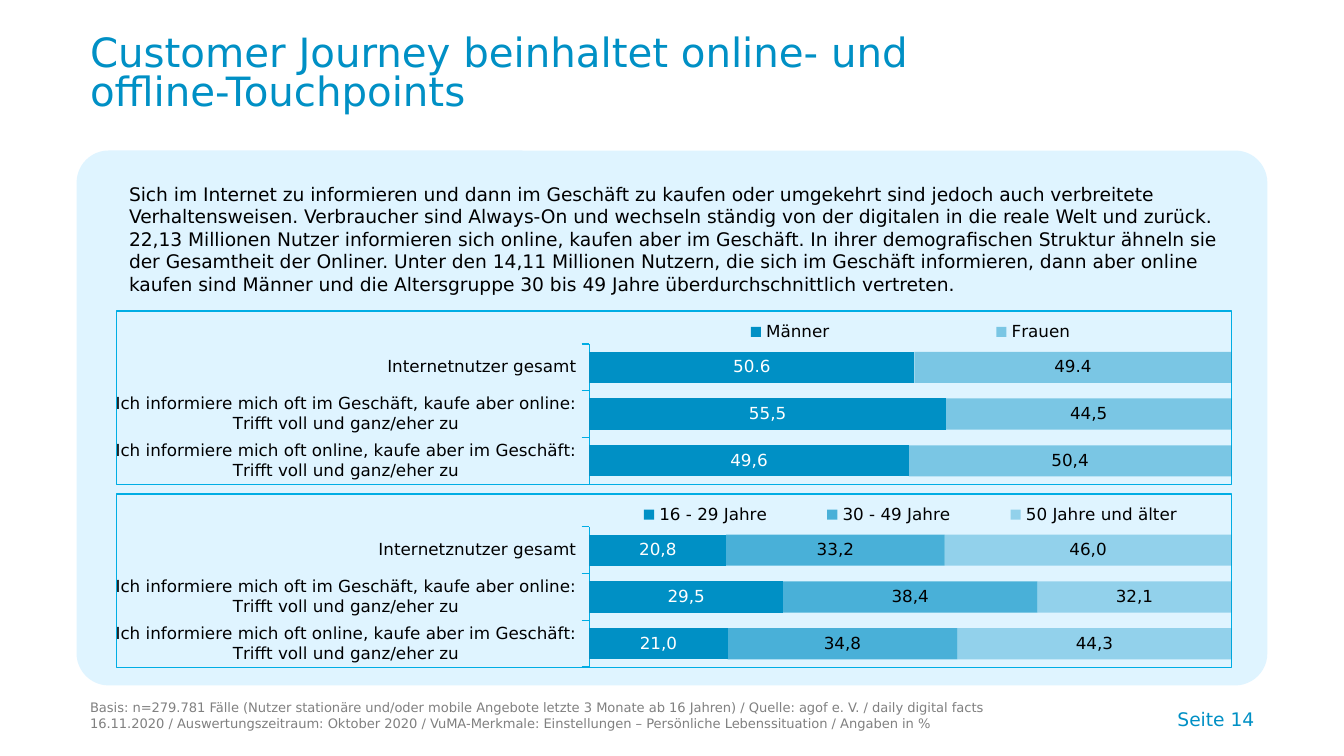
from lxml import etree
from pptx import Presentation
from pptx.chart.data import CategoryChartData
from pptx.dml.color import RGBColor
from pptx.enum import chart as chart_enum, shapes, text
from pptx.oxml import parse_xml
from pptx.oxml.ns import nsdecls, qn
from pptx.util import Inches, Pt

FONT = "DejaVu Sans"
BLUE, LINE, PANEL, GRAY, BLACK, WHITE = "0090C5", "00ADE4", "DFF4FF", "808080", "000000", "FFFFFF"


def rgb(value):
    return RGBColor.from_string(value)


def write(shape, content, box, size, color, anchor=text.MSO_ANCHOR.TOP,
          align=text.PP_ALIGN.LEFT, spacing=1.0):
    """Place a text shape and fill it with one unbulleted paragraph."""
    shape.left, shape.top, shape.width, shape.height = map(Inches, box)
    frame = shape.text_frame
    frame.text = content
    frame.word_wrap = True
    frame.auto_size = text.MSO_AUTO_SIZE.NONE
    frame.vertical_anchor = anchor
    paragraph = frame.paragraphs[0]
    properties = paragraph._p.get_or_add_pPr()
    properties.set("marL", "0")
    properties.set("indent", "0")
    etree.SubElement(properties, qn("a:buNone"))
    paragraph.alignment = align
    paragraph.line_spacing = spacing
    paragraph.space_before = Pt(0)
    font = paragraph.runs[0].font
    font.name, font.size, font.color.rgb = FONT, Pt(size), rgb(color)


presentation = Presentation()
presentation.slide_width = Inches(10)
presentation.slide_height = Inches(10) * 9 // 16
slide = presentation.slides.add_slide(presentation.slide_layouts[3])
title, body, source = slide.placeholders

panel = slide.shapes.add_shape(shapes.MSO_SHAPE.ROUNDED_RECTANGLE,
                               Inches(0.57), Inches(1.12), Inches(8.86), Inches(3.98))
panel.adjustments[0] = 0.06
panel.shadow.inherit = False
panel.fill.solid()
panel.fill.fore_color.rgb = rgb(PANEL)
panel.line.fill.background()
slide.shapes._spTree.insert(2, panel._element)  # behind the placeholders

write(title, "Customer Journey beinhaltet online- und offline-Touchpoints",
      (0.57, 0.28, 7.33, 0.56), 21.6, BLUE, anchor=text.MSO_ANCHOR.MIDDLE, spacing=0.8)
write(body,
      "Sich im Internet zu informieren und dann im Geschäft zu kaufen oder umgekehrt sind jedoch "
      "auch verbreitete Verhaltensweisen. Verbraucher sind Always-On und wechseln ständig von der "
      "digitalen in die reale Welt und zurück. 22,13 Millionen Nutzer informieren sich online, "
      "kaufen aber im Geschäft. In ihrer demografischen Struktur ähneln sie der Gesamtheit der "
      "Onliner. Unter den 14,11 Millionen Nutzern, die sich im Geschäft informieren, dann aber "
      "online kaufen sind Männer und die Altersgruppe 30 bis 49 Jahre überdurchschnittlich vertreten.",
      (0.86, 1.31, 8.31, 1.03), 10, BLACK)
write(source,
      "Basis: n=279.781 Fälle (Nutzer stationäre und/oder mobile Angebote letzte 3 Monate ab 16 "
      "Jahren) / Quelle: agof e. V. / daily digital facts 16.11.2020 / Auswertungszeitraum: Oktober "
      "2020 / VuMA-Merkmale: Einstellungen – Persönliche Lebenssituation / Angaben in %",
      (0.57, 5.1, 7.42, 0.39), 7, GRAY, anchor=text.MSO_ANCHOR.BOTTOM)
write(slide.shapes.add_textbox(0, 0, 0, 0), "Seite 14", (6.54, 5.1, 2.89, 0.38), 10, BLUE,
      anchor=text.MSO_ANCHOR.BOTTOM, align=text.PP_ALIGN.RIGHT)

habits = ["Ich informiere mich oft im Geschäft, kaufe aber online: Trifft voll und ganz/eher zu",
          "Ich informiere mich oft online, kaufe aber im Geschäft: Trifft voll und ganz/eher zu"]
# Per chart: top, first category, series as (name, values, labels by point, opacity in %)
charts = [
    (2.31, "Internetnutzer gesamt", [
        ("Männer", (50.6, 55.5, 49.7), {1: "55,5", 2: "49,6"}, 100),
        ("Frauen", (49.4, 44.5, 50.3), {1: "44,5", 2: "50,4"}, 45)]),
    (3.67, "Internetznutzer gesamt", [
        ("16 - 29 Jahre", (21.3, 30.1, 21.5), {0: "20,8", 1: "29,5", 2: "21,0"}, 100),
        ("30 - 49 Jahre", (34, 39.6, 35.8), {0: "33,2", 1: "38,4", 2: "34,8"}, 67),
        ("50 Jahre und älter", (44.7, 30.2, 42.7), {0: "46,0", 1: "32,1", 2: "44,3"}, 34)]),
]
LAYOUT = ('<c:layout %s><c:manualLayout>{target}<c:xMode val="edge"/><c:yMode val="edge"/>'
          '<c:x val="0.424"/><c:y val="{y}"/><c:w val="0.576"/><c:h val="{h}"/>'
          '</c:manualLayout></c:layout>' % nsdecls("c"))
BORDER = ('<c:spPr %s><a:noFill/><a:ln w="9525"><a:solidFill><a:srgbClr val="%s"/></a:solidFill>'
          '</a:ln></c:spPr>' % (nsdecls("c", "a"), LINE))

for top, total, groups in charts:
    data = CategoryChartData(number_format="0.0")
    data.categories = [total] + habits
    for name, values, labels, opacity in groups:
        data.add_series(name, values)
    chart = slide.shapes.add_chart(chart_enum.XL_CHART_TYPE.BAR_STACKED_100, Inches(0.86),
                                   Inches(top), Inches(8.31), Inches(1.3), data).chart
    chart.has_title = False
    chart.font.name, chart.font.size, chart.font.color.rgb = FONT, Pt(9), rgb(BLACK)
    chart._chartSpace.chart.addnext(parse_xml(BORDER))

    plot_area = chart._chartSpace.chart.plotArea
    for layout in plot_area.findall(qn("c:layout")):
        plot_area.remove(layout)
    target = '<c:layoutTarget val="inner"/>'
    plot_area.insert(0, parse_xml(LAYOUT.format(target=target, y=0.19, h=0.81)))

    chart.has_legend = True
    legend = chart.legend
    legend.position = chart_enum.XL_LEGEND_POSITION.TOP
    legend.include_in_layout = False
    legend.font.size = Pt(9)
    for layout in legend._element.findall(qn("c:layout")):
        legend._element.remove(layout)
    legend._element.find(qn("c:legendPos")).addnext(
        parse_xml(LAYOUT.format(target="", y=0.04, h=0.16)))

    chart.value_axis.has_major_gridlines = False
    chart.value_axis.visible = False
    axis = chart.category_axis
    axis.reverse_order = True
    axis.major_tick_mark = chart_enum.XL_TICK_MARK.OUTSIDE
    axis.format.line.color.rgb = rgb(LINE)
    axis.format.line.width = Pt(0.75)

    plot = chart.plots[0]
    plot.gap_width, plot.overlap, plot.vary_by_categories = 50, 100, False
    for series, (name, values, labels, opacity) in zip(plot.series, groups):
        fill = series.format.fill
        fill.solid()
        fill.fore_color.rgb = rgb(BLUE)
        if opacity < 100:
            color = series._element.find(".//" + qn("a:srgbClr"))
            etree.SubElement(color, qn("a:alpha")).set("val", str(opacity * 1000))
        series_labels = series.data_labels
        series_labels.show_value = True
        series_labels.number_format = "#,##0.0"
        series_labels.number_format_is_linked = False
        series_labels.position = chart_enum.XL_LABEL_POSITION.CENTER
        fonts = [series_labels.font]
        for index, content in labels.items():
            label = series.points[index].data_label
            label.text_frame.text = content
            label.position = chart_enum.XL_LABEL_POSITION.CENTER
            fonts.append(label.text_frame.paragraphs[0].runs[0].font)
        for font in fonts:
            font.name, font.size = FONT, Pt(9)
            font.color.rgb = rgb(WHITE if opacity == 100 else BLACK)

presentation.save("out.pptx")
